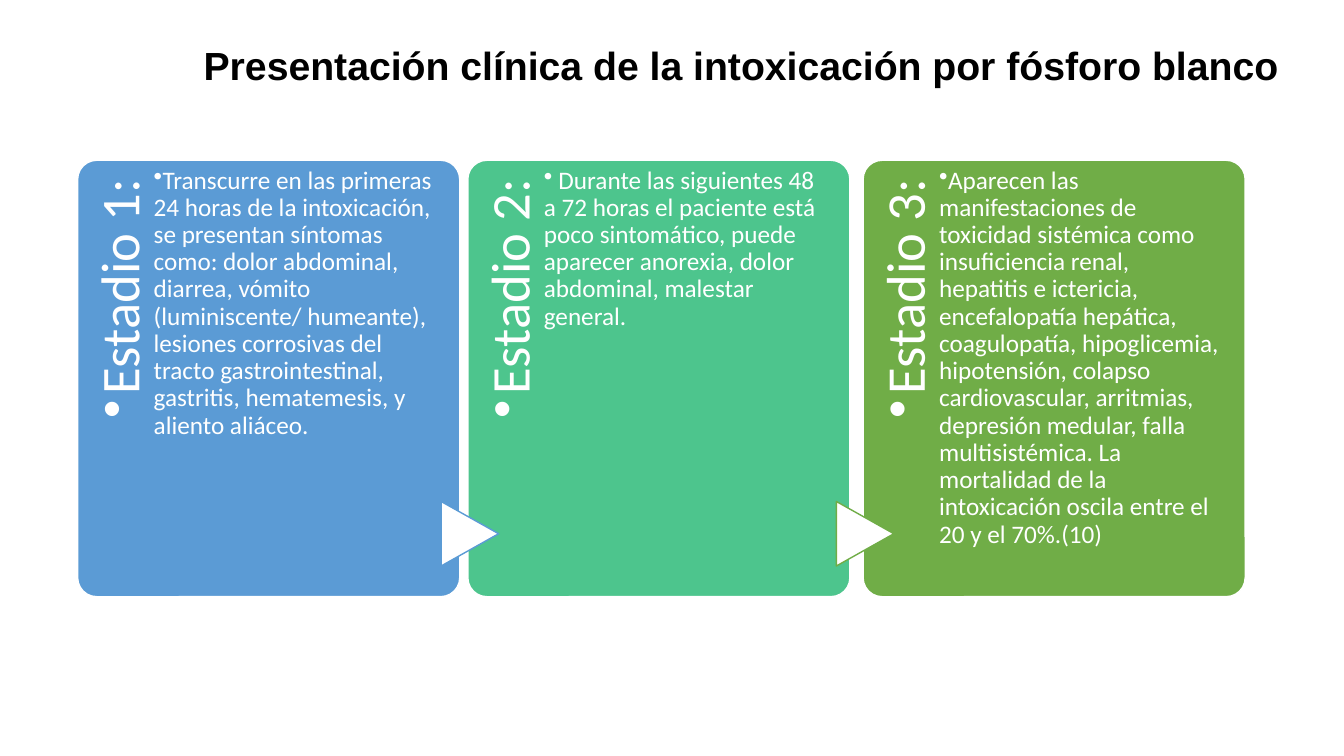
import lxml.etree
import pptx
import pptx.dml.color
import pptx.enum.shapes
import pptx.enum.text
import pptx.oxml.ns
import pptx.util

RGBColor = pptx.dml.color.RGBColor
Shapes = pptx.enum.shapes.MSO_SHAPE
Align = pptx.enum.text.PP_ALIGN
Anchor = pptx.enum.text.MSO_ANCHOR

WHITE = RGBColor(0xFF, 0xFF, 0xFF)
BLACK = RGBColor(0x00, 0x00, 0x00)
BLUE = RGBColor(0x5B, 0x9B, 0xD5)
TEAL = RGBColor(0x4D, 0xC5, 0x8D)
GREEN = RGBColor(0x70, 0xAD, 0x47)

CARD_TOP, CARD_WIDTH, CARD_HEIGHT = 21.2, 28.43, 57.73

STAGES = [
    (5.78, BLUE, None, "Estadio 1:",
     "Transcurre en las primeras 24 horas de la intoxicación, se presentan "
     "síntomas como: dolor abdominal, diarrea, vómito (luminiscente/ humeante), "
     "lesiones corrosivas del tracto gastrointestinal, gastritis, hematemesis, "
     "y aliento aliáceo."),
    (34.81, TEAL, BLUE, "Estadio 2:",
     " Durante las siguientes 48 a 72 horas el paciente está poco sintomático, "
     "puede aparecer anorexia, dolor abdominal, malestar general."),
    (64.22, GREEN, GREEN, "Estadio 3:",
     "Aparecen las manifestaciones de toxicidad sistémica como insuficiencia "
     "renal, hepatitis e ictericia, encefalopatía hepática, coagulopatía, "
     "hipoglicemia, hipotensión, colapso cardiovascular, arritmias, depresión "
     "medular, falla multisistémica. La mortalidad de la intoxicación oscila "
     "entre el 20 y el 70%.(10)"),
]


def write_text(frame, text, size, font="Calibri", color=WHITE, bold=False,
               align=Align.LEFT, bullet=False):
    paragraph = frame.paragraphs[0]
    if bullet:
        properties = paragraph._p.get_or_add_pPr()
        lxml.etree.SubElement(properties, pptx.oxml.ns.qn("a:buChar"), char="•")
    paragraph.alignment = align
    paragraph.line_spacing = 0.9
    run = paragraph.add_run()
    run.text = text
    run.font.name = font
    run.font.size = pptx.util.Pt(size)
    run.font.bold = bold
    run.font.color.rgb = color


class StageSlide:
    def __init__(self, presentation):
        self.width = presentation.slide_width
        self.height = presentation.slide_height
        self.slide = presentation.slides.add_slide(presentation.slide_layouts[6])

    def area(self, left, top, width, height):
        return (round(left * self.width / 100), round(top * self.height / 100),
                round(width * self.width / 100), round(height * self.height / 100))

    def shape(self, kind, area, fill, line):
        shape = self.slide.shapes.add_shape(kind, *self.area(*area))
        shape.shadow.inherit = False
        shape.fill.solid()
        shape.fill.fore_color.rgb = fill
        shape.line.color.rgb = line
        shape.line.width = pptx.util.Pt(1)
        return shape

    def text(self, area, text, size, insets=(0, 0, 0, 0), rotation=0,
             anchor=Anchor.TOP, **text_format):
        box = self.slide.shapes.add_textbox(*self.area(*area))
        box.rotation = rotation
        frame = box.text_frame
        frame.word_wrap = True
        frame.vertical_anchor = anchor
        (frame.margin_left, frame.margin_top,
         frame.margin_right, frame.margin_bottom) = map(pptx.util.Inches, insets)
        write_text(frame, text, size, **text_format)

    def title(self, text):
        self.text((12, 4.53, 86.27, 8.8), text, 28, insets=(0.1, 0.05, 0.1, 0.05),
                  anchor=Anchor.MIDDLE, font="Arial", color=BLACK, bold=True,
                  align=Align.CENTER)

    def arrow(self, left, line):
        arrow = self.shape(Shapes.FLOWCHART_EXTRACT, (left, 66.8, 4.8, 7.6), WHITE, line)
        arrow.rotation = 90

    def stage(self, left, fill, arrow_line, heading, description):
        card = self.shape(Shapes.ROUNDED_RECTANGLE,
                          (left, CARD_TOP, CARD_WIDTH, CARD_HEIGHT), fill, WHITE)
        card.adjustments[0] = 0.05
        self.text((left - 10.5, 39.73, 26.63, 10.13), heading, 39,
                  insets=(0, 0.15, 0.19, 0), rotation=270, align=Align.RIGHT, bullet=True)
        if arrow_line is not None:
            self.arrow(left - 2.25, arrow_line)
        self.text((left + 5.66, CARD_TOP, 21.16, CARD_HEIGHT), description, 18,
                  insets=(0, 0.07, 0, 0), bullet=True)


def main():
    presentation = pptx.Presentation()
    presentation.slide_width = pptx.util.Inches(13.33)
    presentation.slide_height = pptx.util.Inches(7.5)
    slide = StageSlide(presentation)
    slide.title("Presentación clínica de la intoxicación por fósforo blanco")
    for stage in STAGES:
        slide.stage(*stage)
    presentation.save("out.pptx")


if __name__ == "__main__":
    main()
